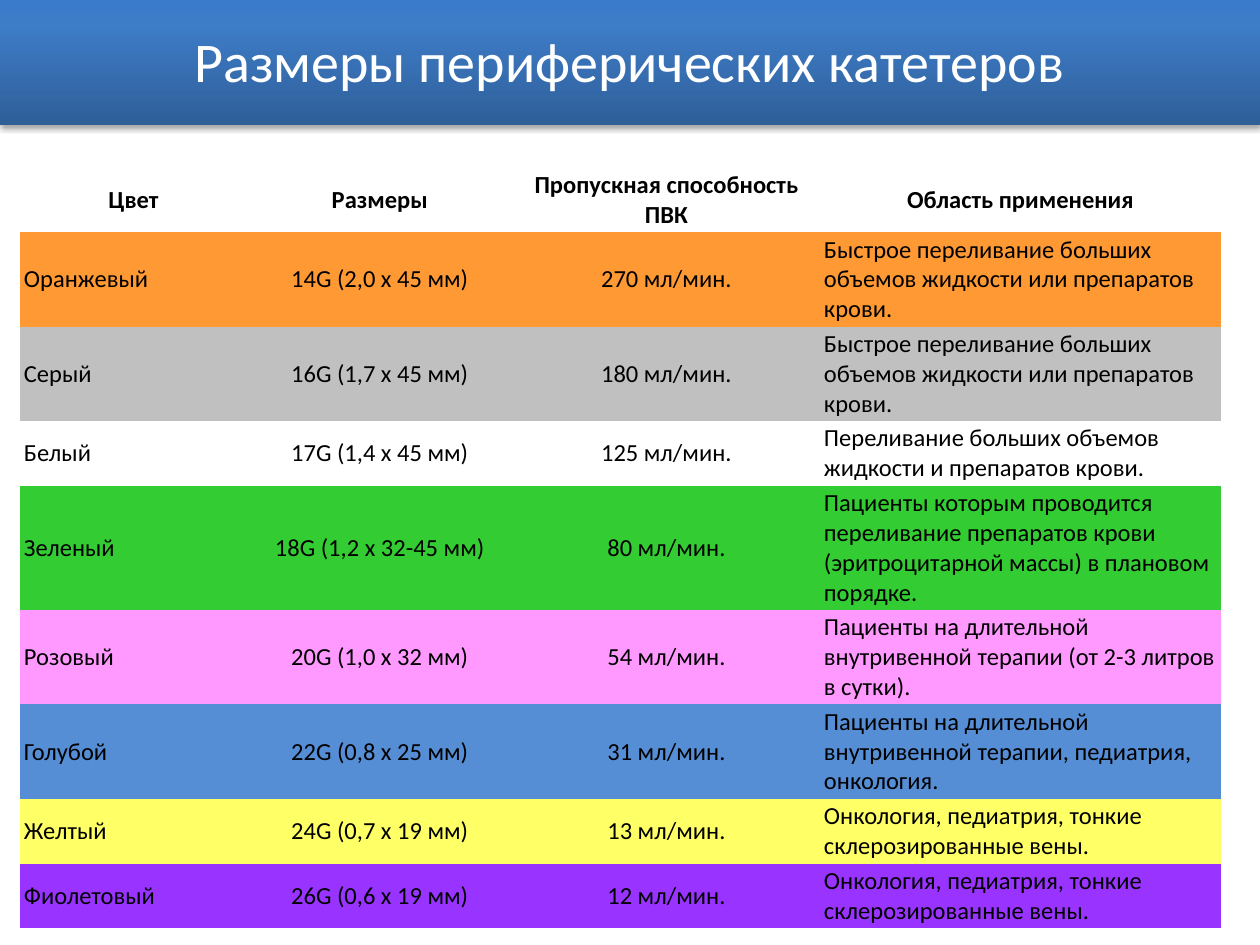
"""Builds a slide with a table of peripheral catheter sizes."""
import pptx
import pptx.dml.color
import pptx.enum.shapes
import pptx.enum.text
import pptx.oxml
import pptx.oxml.ns
import pptx.util

LEFT = pptx.enum.text.PP_ALIGN.LEFT
MID = pptx.enum.text.PP_ALIGN.CENTER
WIDE = pptx.util.Inches(10)
HIGH = pptx.util.Inches(7.5)


def tint(code):
    return pptx.dml.color.RGBColor.from_string(code)


def put(frame, text, size=14, color="000000", bold=False, align=MID):
    frame.word_wrap = True
    para = frame.paragraphs[0]
    para.alignment = align
    run = para.add_run()
    run.text = text
    run.font.name = "Calibri"
    run.font.size = pptx.util.Pt(size)
    run.font.bold = bold
    run.font.color.rgb = tint(color)


deck = pptx.Presentation()
deck.slide_width, deck.slide_height = WIDE, HIGH
slide = deck.slides.add_slide(deck.slide_layouts[5])

title = slide.shapes.title
title.left, title.top, title.width, title.height = 0, 0, WIDE, int(HIGH * 0.128)
title.text_frame.vertical_anchor = pptx.enum.text.MSO_ANCHOR.MIDDLE
put(title.text_frame, "Размеры периферических катетеров", size=32, color="FFFFFF")

band = slide.shapes.add_shape(
    pptx.enum.shapes.MSO_SHAPE.RECTANGLE, 0, 0, WIDE, int(HIGH * 0.132))
band.line.fill.background()
title.element.addprevious(band.element)
space = pptx.oxml.ns.nsdecls("a")
stops = "".join(
    f'<a:gs pos="{spot * 1000}"><a:srgbClr val="{code}"/></a:gs>'
    for spot, code in [(0, "2F5F99"), (80, "3D7CC7"), (100, "3A7CCB")])
props = band.element.spPr
props.find(pptx.oxml.ns.qn("a:ln")).addprevious(pptx.oxml.parse_xml(
    f'<a:gradFill {space} rotWithShape="1"><a:gsLst>{stops}</a:gsLst>'
    '<a:lin ang="16200000" scaled="0"/></a:gradFill>'))
props.append(pptx.oxml.parse_xml(
    f'<a:effectLst {space}><a:outerShdw blurRad="39370" dist="22860" dir="5400000" '
    'rotWithShape="0"><a:srgbClr val="000000"><a:alpha val="35000"/></a:srgbClr>'
    '</a:outerShdw></a:effectLst>'))

fast = "Быстрое переливание больших объемов жидкости или препаратов крови."
thin = "Онкология, педиатрия, тонкие склерозированные вены."
rows = [
    (None, 2, "Цвет", "Размеры", "Пропускная способность ПВК", "Область применения"),
    ("FF9933", 3, "Оранжевый", "14G (2,0 х 45 мм)", "270 мл/мин.", fast),
    ("C0C0C0", 3, "Серый", "16G (1,7 х 45 мм)", "180 мл/мин.", fast),
    (None, 2, "Белый", "17G (1,4 х 45 мм)", "125 мл/мин.",
     "Переливание больших объемов жидкости и препаратов крови."),
    ("33CC33", 4, "Зеленый", "18G (1,2 х 32-45 мм)", "80 мл/мин.",
     "Пациенты которым проводится переливание препаратов крови "
     "(эритроцитарной массы) в плановом порядке."),
    ("FF99FF", 3, "Розовый", "20G (1,0 х 32 мм)", "54 мл/мин.",
     "Пациенты на длительной внутривенной терапии (от 2-3 литров в сутки)."),
    ("558ED5", 3, "Голубой", "22G (0,8 х 25 мм)", "31 мл/мин.",
     "Пациенты на длительной внутривенной терапии, педиатрия, онкология."),
    ("FFFF66", 2, "Желтый", "24G (0,7 х 19 мм)", "13 мл/мин.", thin),
    ("9933FF", 2, "Фиолетовый", "26G (0,6 х 19 мм)", "12 мл/мин.", thin),
]
cols = [1.8, 2.11, 2.44, 3.18]
tall = [pptx.util.Inches(0.24 * row[1] + 0.02) for row in rows]
table = slide.shapes.add_table(
    len(rows), len(cols), pptx.util.Inches(0.16), pptx.util.Inches(1.33),
    pptx.util.Inches(sum(cols)), sum(tall)).table
table.horz_banding = False
style = next(table._tbl.iter(pptx.oxml.ns.qn("a:tableStyleId")))
style.text = "{2D5ABB26-0587-4C30-8999-92F81FD0307C}"
for col, width in zip(table.columns, cols):
    col.width = pptx.util.Inches(width)

for r, (fill, lines, *texts) in enumerate(rows):
    table.rows[r].height = tall[r]
    for c, text in enumerate(texts):
        cell = table.cell(r, c)
        cell.vertical_anchor = pptx.enum.text.MSO_ANCHOR.MIDDLE
        cell.margin_left = cell.margin_right = pptx.util.Inches(0.03)
        cell.margin_top = cell.margin_bottom = pptx.util.Inches(0.02)
        if fill:
            cell.fill.solid()
            cell.fill.fore_color.rgb = tint(fill)
        else:
            cell.fill.background()
        put(cell.text_frame, text, bold=r == 0,
            align=LEFT if r and c in (0, 3) else MID)

deck.save("out.pptx")
